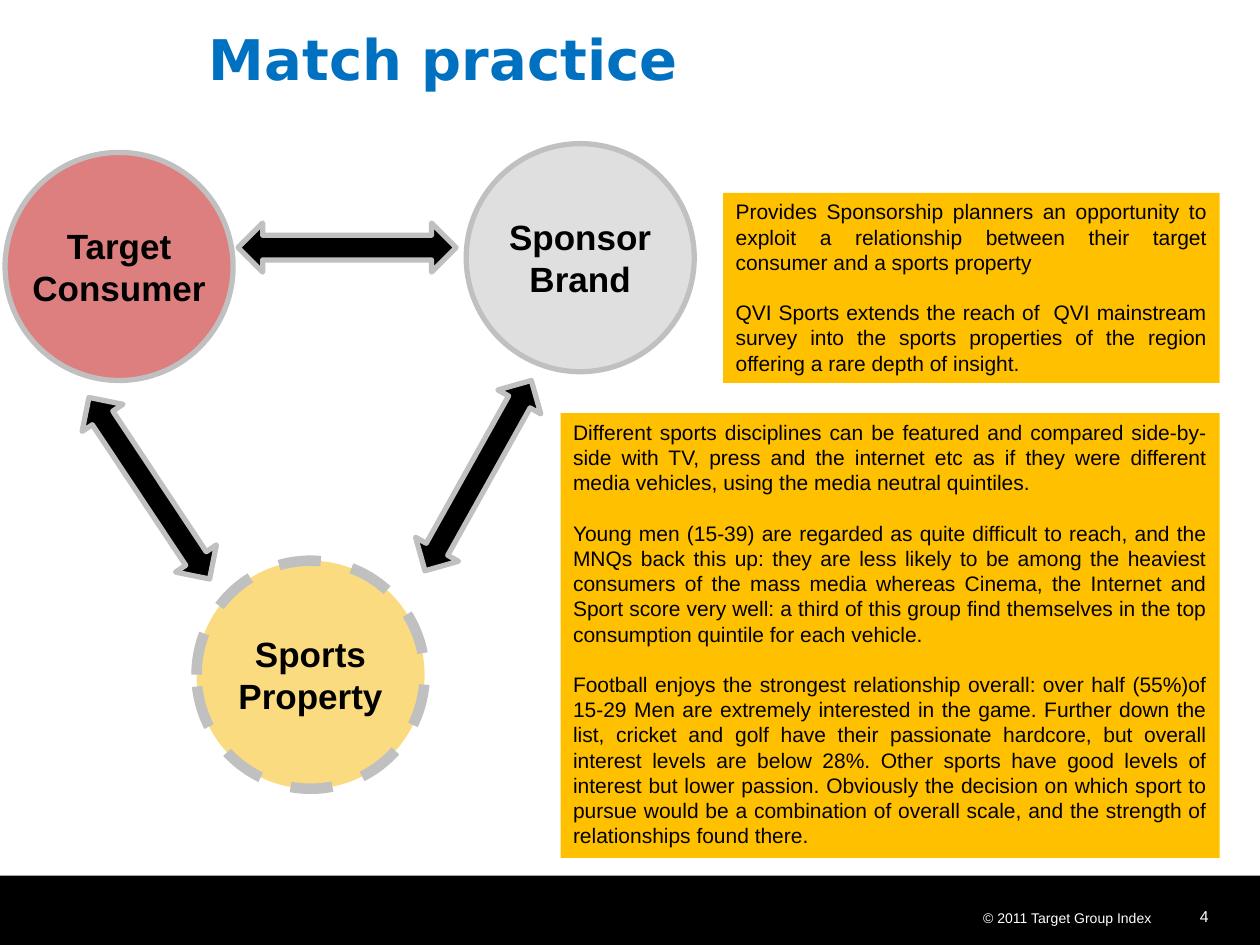
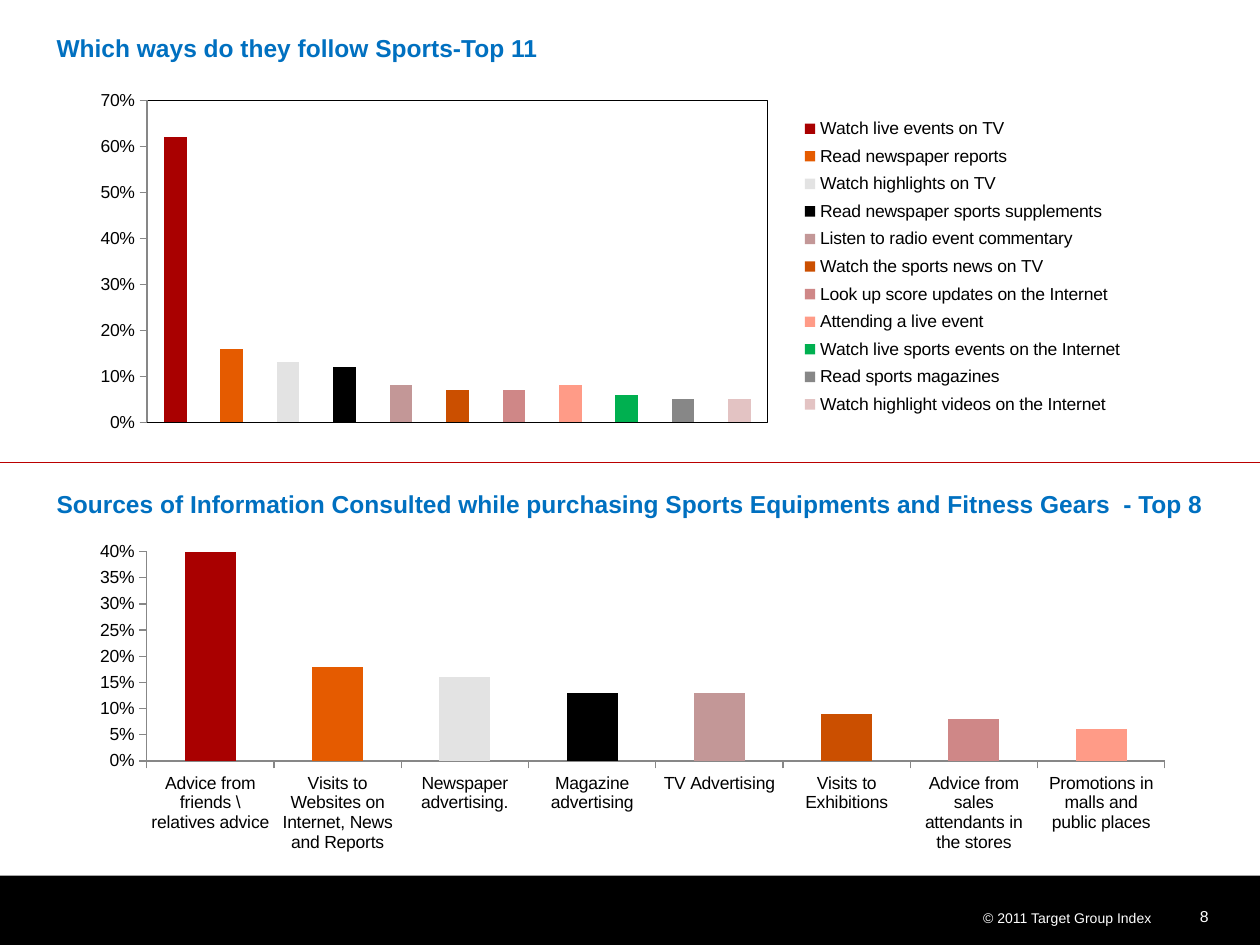
"""Build two sports sponsorship slides: a match diagram and a pair of survey charts."""
from lxml import etree
from pptx import Presentation
from pptx.chart.data import CategoryChartData
from pptx.dml.color import RGBColor
from pptx.enum.chart import XL_CHART_TYPE as CHART, XL_LEGEND_POSITION as LEGEND, XL_TICK_MARK as TICK
from pptx.enum.dml import MSO_LINE as DASH
from pptx.enum.shapes import MSO_CONNECTOR as CONNECTOR, MSO_SHAPE as SHAPE
from pptx.enum.text import MSO_ANCHOR as ANCHOR, PP_ALIGN as ALIGN
from pptx.oxml import parse_xml
from pptx.oxml.ns import nsdecls, qn
from pptx.util import Inches, Pt

BLACK = RGBColor(0x00, 0x00, 0x00)
WHITE = RGBColor(0xFF, 0xFF, 0xFF)
BLUE = RGBColor(0x00, 0x70, 0xC0)
RED = RGBColor(0xBE, 0x00, 0x00)
RULE_RED = RGBColor(0xBA, 0x00, 0x00)
SILVER = RGBColor(0xC0, 0xC0, 0xC0)
GOLD = RGBColor(0xF8, 0xB8, 0x00)
AMBER = RGBColor(0xFF, 0xC0, 0x00)
AXIS_GREY = RGBColor(0x87, 0x87, 0x87)
BAR_COLOURS = [RGBColor.from_string(code) for code in (
    "A90000", "E55B00", "E3E3E3", "000000", "C39797", "CB4F00",
    "CF8787", "FF9B87", "00B050", "878787", "E3C3C3")]

COPYRIGHT_FORMAT = {"size": Pt(8), "name": "Arial"}
NUMBER_FORMAT = {"size": Pt(9), "name": "Arial"}
TITLE_FORMAT = {"size": Pt(32), "name": "DejaVu Sans", "bold": True}
HEADING_FORMAT = {"size": Pt(14), "name": "Arial", "bold": True}
CIRCLE_FORMAT = {"size": Pt(20), "name": "Arial", "bold": True}
BODY_FORMAT = {"size": Pt(12), "name": "Arial"}
CHART_FORMAT = {"size": Pt(10), "name": "Arial"}
NO_INSETS = dict.fromkeys(("margin_left", "margin_top", "margin_right", "margin_bottom"), 0)


def write(frame, texts, formats, colour, align=ALIGN.LEFT, **frame_values):
    for name, value in {"word_wrap": True, "vertical_anchor": ANCHOR.TOP, **frame_values}.items():
        setattr(frame, name, value)
    for index, text in enumerate(texts):
        paragraph = frame.add_paragraph() if index else frame.paragraphs[0]
        paragraph.text = text
        paragraph.alignment = align
        if index:
            paragraph.space_before = Pt(14.4)
        for name, value in formats.items():
            setattr(paragraph.font, name, value)
        paragraph.font.color.rgb = colour


def draw(slide, kind, box, fill, outline=None, width=3):
    shape = slide.shapes.add_shape(kind, *map(Inches, box))
    shape.shadow.inherit = False
    shape.fill.solid()
    shape.fill.fore_color.rgb = fill
    if outline is None:
        shape.line.fill.background()
    else:
        shape.line.color.rgb = outline
        shape.line.width = Pt(width)
    return shape


deck = Presentation()
deck.slide_width, deck.slide_height = Inches(10), Inches(7.5)
blank = deck.slide_layouts[6]
match_slide, survey_slide = deck.slides.add_slide(blank), deck.slides.add_slide(blank)

for slide, number in ((match_slide, "4"), (survey_slide, "8")):
    draw(slide, SHAPE.RECTANGLE, (0, 6.95, 10, 0.55), BLACK)
    copyright_line = slide.shapes.add_textbox(Inches(4.92), Inches(7.22), Inches(4.22), Inches(0.12))
    write(copyright_line.text_frame, ["© 2011 Target Group Index"], COPYRIGHT_FORMAT, WHITE,
          ALIGN.RIGHT, **NO_INSETS)
    page_number = slide.shapes.add_textbox(Inches(9.3), Inches(7.15), Inches(0.39), Inches(0.35))
    write(page_number.text_frame, [number], NUMBER_FORMAT, WHITE, ALIGN.RIGHT)

title = match_slide.shapes.add_textbox(Inches(1.56), 0, Inches(5.59), Inches(0.93))
write(title.text_frame, ["Match practice"], TITLE_FORMAT, BLUE, vertical_anchor=ANCHOR.MIDDLE)

parties = [
    ("Target\nConsumer", 0.04, 1.21, RED, 3, None),
    ("Sponsor\nBrand", 3.7, 1.14, SILVER, 3, None),
    ("Sports\nProperty", 1.56, 4.45, GOLD, 6, DASH.DASH),
]
for label, left, top, fill, width, dash in parties:
    circle = draw(match_slide, SHAPE.OVAL, (left, top, 1.81, 1.81), fill, SILVER, width)
    circle.line.dash_style = dash
    tint = circle.fill._xPr.find(qn("a:solidFill"))[0]
    etree.SubElement(tint, qn("a:alpha"), val="50000")
    write(circle.text_frame, [label], CIRCLE_FORMAT, BLACK, ALIGN.CENTER,
          word_wrap=False, vertical_anchor=ANCHOR.MIDDLE)

for left, top, angle in ((0.99, 3.01, 326.4), (3.6, 2.91, 29.2), (2.56, 1.1, 270)):
    link = draw(match_slide, SHAPE.UP_DOWN_ARROW, (left, top, 0.39, 1.73), BLACK, SILVER)
    link.adjustments[0], link.adjustments[1] = 0.88, 0.5
    link.rotation = angle

notes = [
    ((5.74, 1.53, 3.94, 1.51), [
        "Provides Sponsorship planners an opportunity to exploit a relationship between their "
        "target consumer and a sports property",
        "QVI Sports extends the reach of  QVI mainstream survey into the sports properties of "
        "the region offering a rare depth of insight.",
    ]),
    ((4.45, 3.28, 5.23, 3.53), [
        "Different sports disciplines can be featured and compared side-by-side with TV, press "
        "and the internet etc as if they were different media vehicles, using the media neutral "
        "quintiles.",
        "Young men (15-39) are regarded as quite difficult to reach, and the MNQs back this up: "
        "they are less likely to be among the heaviest consumers of the mass media whereas "
        "Cinema, the Internet and Sport score very well: a third of this group find themselves "
        "in the top consumption quintile for each vehicle.",
        "Football enjoys the strongest relationship overall: over half (55%)of 15-29 Men are "
        "extremely interested in the game. Further down the list, cricket and golf have their "
        "passionate hardcore, but overall interest levels are below 28%. Other sports have good "
        "levels of interest but lower passion. Obviously the decision on which sport to pursue "
        "would be a combination of overall scale, and the strength of relationships found there.",
    ]),
]
for box, texts in notes:
    panel = draw(match_slide, SHAPE.RECTANGLE, box, AMBER)
    write(panel.text_frame, texts, BODY_FORMAT, BLACK, ALIGN.JUSTIFY)

divider = survey_slide.shapes.add_connector(CONNECTOR.STRAIGHT, 0, Inches(3.67), Inches(10), Inches(3.67))
divider.line.color.rgb = RULE_RED
divider.line.width = Pt(0.75)
etree.SubElement(divider._element.spPr, qn("a:effectLst"))

follow_ways = {
    "Watch live events on TV": 0.62,
    "Read newspaper reports": 0.16,
    "Watch highlights on TV": 0.13,
    "Read newspaper sports supplements": 0.12,
    "Listen to radio event commentary": 0.08,
    "Watch the sports news on TV": 0.07,
    "Look up score updates on the Internet": 0.07,
    "Attending a live event": 0.08,
    "Watch live sports events on the Internet": 0.06,
    "Read sports magazines": 0.05,
    "Watch highlight videos on the Internet": 0.05,
}
information_sources = {
    "Advice from friends \\ relatives advice": 0.4,
    "Visits to Websites on Internet, News and Reports": 0.18,
    "Newspaper advertising.": 0.16,
    "Magazine advertising": 0.13,
    "TV Advertising": 0.13,
    "Visits to Exhibitions": 0.09,
    "Advice from sales attendants in the stores": 0.08,
    "Promotions in malls and public places": 0.06,
}
surveys = [
    ("Which ways do they follow Sports-Top 11", (0.35, 0.21, 5.12, 0.34), follow_ways,
     (0.75, 0.6, 8.35, 2.83), (0.05, 0.07, 0.59, 0.91), (0.66, 0.1, 0.33, 0.88), 0.7, 0.1),
    ("Sources of Information Consulted while purchasing Sports Equipments and Fitness Gears  - Top 8",
     (0.35, 3.83, 9.65, 0.34), information_sources,
     (0.72, 4.3, 8.88, 2.52), (0.05, 0.03, 0.91, 0.66), None, 0.4, 0.05),
]
for heading, heading_box, shares, chart_box, plot_area, legend_area, top_share, step in surveys:
    data = CategoryChartData(number_format="0%")
    data.categories = list(shares)
    data.add_series("Series 1", list(shares.values()))
    chart = survey_slide.shapes.add_chart(CHART.COLUMN_CLUSTERED, *map(Inches, chart_box), data).chart
    chart.has_title = False
    chart.has_legend = legend_area is not None
    for name, value in CHART_FORMAT.items():
        setattr(chart.font, name, value)
    chart.font.color.rgb = BLACK

    bars = chart.plots[0]
    bars.gap_width = 150
    bars.vary_by_categories = chart.has_legend
    for index in range(len(shares)):
        bar = bars.series[0].points[index].format.fill
        bar.solid()
        bar.fore_color.rgb = BAR_COLOURS[index]

    for axis in (chart.category_axis, chart.value_axis):
        axis.has_major_gridlines = False
        axis.major_tick_mark = TICK.OUTSIDE
        axis.format.line.color.rgb = AXIS_GREY
    scale = {"minimum_scale": 0, "maximum_scale": top_share, "major_unit": step}
    for name, value in scale.items():
        setattr(chart.value_axis, name, value)
    chart.value_axis.tick_labels.number_format = "0%"
    chart.value_axis.tick_labels.number_format_is_linked = False

    plot_element = chart._chartSpace.chart.plotArea
    layouts = [(plot_element, 0, plot_area, '<c:layoutTarget val="inner"/>')]
    if chart.has_legend:
        chart.category_axis.visible = False
        chart.legend.position = LEGEND.RIGHT
        chart.legend.include_in_layout = False
        layouts.append((chart.legend._element, 1, legend_area, ""))
        plot_element.append(parse_xml(
            f'<c:spPr {nsdecls("c", "a")}><a:noFill/><a:ln w="9525"><a:solidFill>'
            f'<a:srgbClr val="{BLACK}"/></a:solidFill></a:ln></c:spPr>'))
    for element, position, area, target in layouts:
        for automatic in element.findall(qn("c:layout")):
            element.remove(automatic)
        modes = '<c:xMode val="edge"/><c:yMode val="edge"/>'
        sizes = "".join(f'<c:{side} val="{value}"/>' for side, value in zip("xywh", area))
        element.insert(position, parse_xml(
            f'<c:layout {nsdecls("c")}><c:manualLayout>{target}{modes}{sizes}</c:manualLayout></c:layout>'))

    caption = survey_slide.shapes.add_textbox(*map(Inches, heading_box))
    write(caption.text_frame, [heading], HEADING_FORMAT, BLUE)

deck.save("out.pptx")
